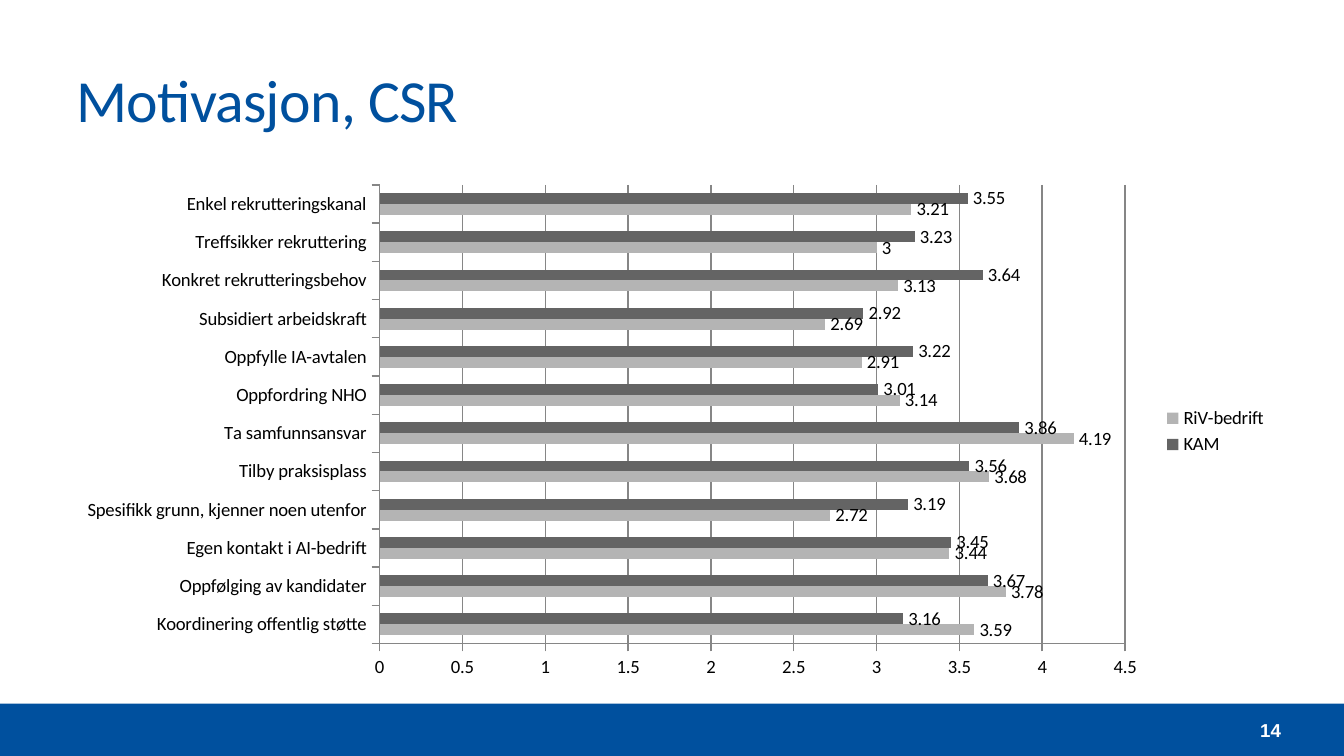
from pptx import Presentation
from pptx.chart.data import CategoryChartData
from pptx.dml.color import RGBColor
from pptx.enum.chart import (XL_CHART_TYPE, XL_LABEL_POSITION,
                             XL_LEGEND_POSITION, XL_TICK_MARK)
from pptx.enum.shapes import MSO_SHAPE
from pptx.enum.text import MSO_ANCHOR, PP_ALIGN
from pptx.oxml.ns import qn
from pptx.util import Inches, Pt

BAR_CLUSTERED = XL_CHART_TYPE.BAR_CLUSTERED
OUTSIDE_END = XL_LABEL_POSITION.OUTSIDE_END
LEGEND_RIGHT = XL_LEGEND_POSITION.RIGHT
TICK_OUTSIDE = XL_TICK_MARK.OUTSIDE
RECTANGLE = MSO_SHAPE.RECTANGLE
MIDDLE = MSO_ANCHOR.MIDDLE
LEFT, RIGHT = PP_ALIGN.LEFT, PP_ALIGN.RIGHT

COLORS = {
    "blue": "00509E",
    "white": "FFFFFF",
    "black": "000000",
    "axis": "868686",
    "KAM": "646464",
    "RiV-bedrift": "B4B4B4",
}
SLIDE_WIDTH = 10
SLIDE_HEIGHT = SLIDE_WIDTH * 9 / 16
MARGIN, CONTENT_WIDTH = 0.47, 9.06
FOOTER_HEIGHT = 0.39
FOOTER_TOP = SLIDE_HEIGHT - FOOTER_HEIGHT

SERIES_NAMES = ["KAM", "RiV-bedrift"]
SCORES = [
    ("Enkel rekrutteringskanal", 3.55, 3.21),
    ("Treffsikker rekruttering", 3.23, 3),
    ("Konkret rekrutteringsbehov", 3.64, 3.13),
    ("Subsidiert arbeidskraft", 2.92, 2.69),
    ("Oppfylle IA-avtalen", 3.22, 2.91),
    ("Oppfordring NHO", 3.01, 3.14),
    ("Ta samfunnsansvar", 3.86, 4.19),
    ("Tilby praksisplass", 3.56, 3.68),
    ("Spesifikk grunn, kjenner noen utenfor", 3.19, 2.72),
    ("Egen kontakt i AI-bedrift", 3.45, 3.44),
    ("Oppfølging av kandidater", 3.67, 3.78),
    ("Koordinering offentlig støtte", 3.16, 3.59),
]


def color(name):
    """Return the named colour."""
    return RGBColor.from_string(COLORS[name])


def set_font(font, name, size, color_name, bold=False):
    """Apply typeface, size, colour and weight to a font."""
    font.name = name
    font.size = Pt(size)
    font.bold = bold
    font.color.rgb = color(color_name)


def set_title(slide, text):
    """Place and format the slide title."""
    title = slide.shapes.title
    title.left, title.top = Inches(MARGIN), Inches(0.24)
    title.width, title.height = Inches(CONTENT_WIDTH), Inches(0.98)
    frame = title.text_frame
    frame.text = text
    frame.vertical_anchor = MIDDLE
    paragraph = frame.paragraphs[0]
    paragraph.alignment = LEFT
    run = paragraph.runs[0]
    set_font(run.font, "Calibri", 32, "blue")
    run.font._element.set("spc", "-40")


def add_footer(slide, number):
    """Add the footer band with the slide number."""
    band = slide.shapes.add_shape(RECTANGLE, 0, Inches(FOOTER_TOP),
                                  Inches(SLIDE_WIDTH), Inches(FOOTER_HEIGHT))
    band.shadow.inherit = False
    band.fill.solid()
    band.fill.fore_color.rgb = color("blue")
    band.line.fill.background()

    box = slide.shapes.add_textbox(Inches(8.82), Inches(FOOTER_TOP),
                                   Inches(0.71), Inches(FOOTER_HEIGHT))
    frame = box.text_frame
    frame.text = number
    frame.word_wrap = True
    frame.vertical_anchor = MIDDLE
    frame.margin_left = frame.margin_right = 0
    frame.margin_top = frame.margin_bottom = 0
    paragraph = frame.paragraphs[0]
    paragraph.alignment = RIGHT
    set_font(paragraph.runs[0].font, "Arial", 10, "white", bold=True)


def format_line(line):
    """Give an axis or gridline its thin grey stroke."""
    line.color.rgb = color("axis")
    line.width = Pt(0.75)


def format_axes(chart):
    """Run categories downwards and keep the value scale at the bottom."""
    for axis in (chart.category_axis, chart.value_axis):
        axis.major_tick_mark = TICK_OUTSIDE
        format_line(axis.format.line)
    chart.category_axis.reverse_order = True
    value_axis = chart.value_axis
    value_axis._element.find(qn("c:crosses")).set("val", "max")
    value_axis.minimum_scale, value_axis.maximum_scale = 0, 4.5
    value_axis.major_unit = 0.5
    value_axis.has_major_gridlines = True
    format_line(value_axis.major_gridlines.format.line)


def add_score_chart(slide):
    """Add the clustered bar chart of motivation scores."""
    categories, *columns = zip(*SCORES)
    data = CategoryChartData()
    data.categories = categories
    for name, values in zip(SERIES_NAMES, columns):
        data.add_series(name, values)
    chart = slide.shapes.add_chart(BAR_CLUSTERED, Inches(MARGIN), Inches(1.3),
                                   Inches(CONTENT_WIDTH), Inches(3.82), data).chart
    set_font(chart.font, "Calibri", 10, "black")
    chart.has_title = False
    chart.has_legend = True
    chart.legend.position = LEGEND_RIGHT
    chart.legend.include_in_layout = False
    format_axes(chart)

    plot = chart.plots[0]
    plot.gap_width = 150
    plot.vary_by_categories = False
    for series in plot.series:
        series.format.fill.solid()
        series.format.fill.fore_color.rgb = color(series.name)
        series.data_labels.show_value = True
        series.data_labels.position = OUTSIDE_END


def main():
    """Build and save the presentation."""
    presentation = Presentation()
    presentation.slide_width = Inches(SLIDE_WIDTH)
    presentation.slide_height = Inches(SLIDE_HEIGHT)
    slide = presentation.slides.add_slide(presentation.slide_layouts[5])
    add_footer(slide, "14")
    set_title(slide, "Motivasjon, CSR")
    add_score_chart(slide)
    presentation.save("out.pptx")


if __name__ == "__main__":
    main()
